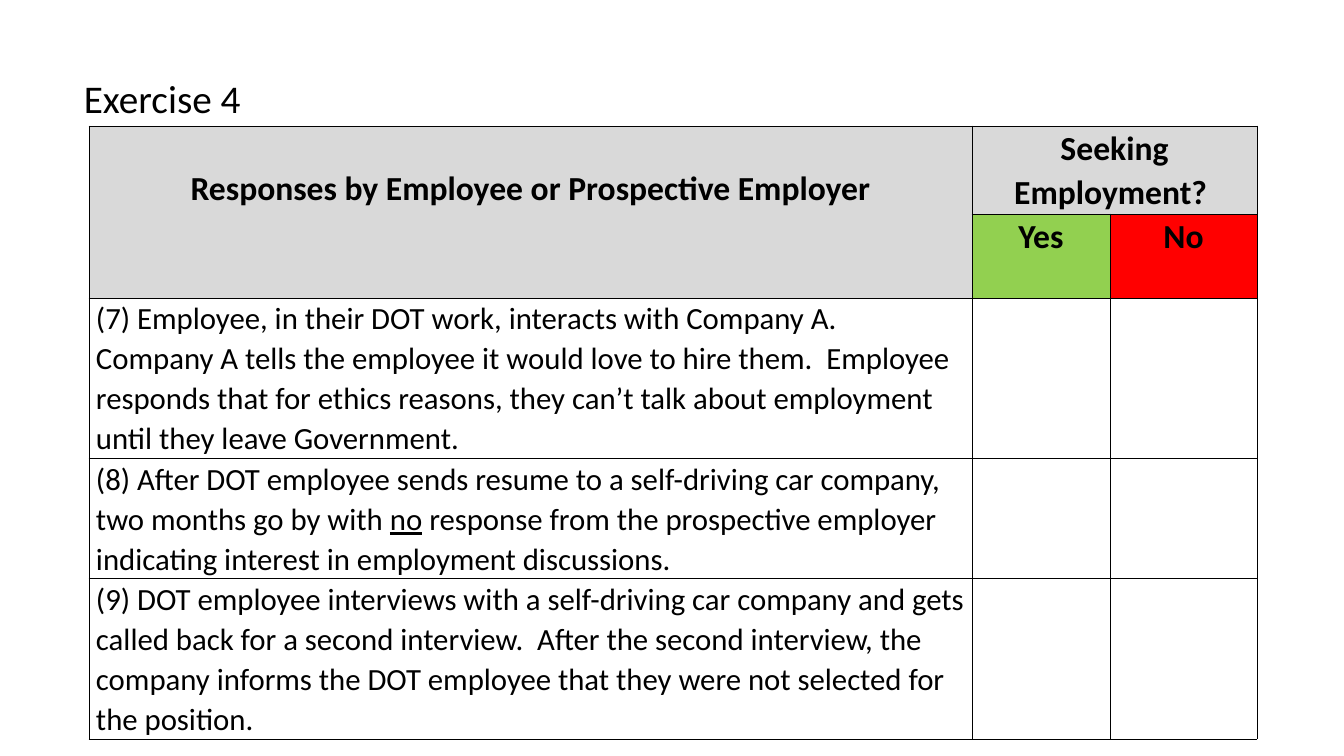
from dataclasses import dataclass

from lxml.etree import SubElement
from pptx import Presentation
from pptx.dml.color import RGBColor
from pptx.enum.text import PP_ALIGN as Align
from pptx.oxml.ns import qn
from pptx.util import Pt

PX = 9071.43  # EMU in one px


@dataclass(frozen=True)
class Theme:
    font: str = "Calibri"
    ink: str = "000000"
    header: str = "D9D9D9"
    yes: str = "92D050"
    no: str = "FF0000"
    title_size: int = 28
    header_size: int = 24
    body_size: int = 22
    border: float = 0.5


theme = Theme()


def px(length):
    return round(length * PX)


def write(frame, *texts, size, bold=False, align=Align.LEFT, spacing=1.07, underlined=""):
    """Fill the first paragraph with one span per text; underline the span equal to underlined."""
    para = frame.paragraphs[0]
    para.alignment = align
    para.line_spacing = spacing
    for text in texts:
        span = para.add_run()
        span.text = text
        span.font.name = theme.font
        span.font.size = Pt(size)
        span.font.bold = bold
        span.font.underline = text == underlined
        span.font.color.rgb = RGBColor.from_string(theme.ink)


deck = Presentation()
deck.slide_width, deck.slide_height = px(1344), px(756)
page = deck.slides.add_slide(deck.slide_layouts[6])

# Table grid
column_widths = [883, 138, 147]
row_heights = [88, 83, 160, 120, 160]
table = page.shapes.add_table(
    len(row_heights), len(column_widths),
    px(89), px(126), px(sum(column_widths)), px(sum(row_heights)),
).table
table.first_row = table.horz_banding = False
for column, width in zip(table.columns, column_widths):
    column.width = px(width)
for row, height in zip(table.rows, row_heights):
    row.height = px(height)

for cell in table.iter_cells():
    cell.margin_left = cell.margin_right = px(7)
    cell.margin_top = cell.margin_bottom = 0
    properties = cell._tc.get_or_add_tcPr()
    for side in ("a:lnL", "a:lnR", "a:lnT", "a:lnB"):
        line = SubElement(properties, qn(side), w=str(Pt(theme.border)))
        fill = SubElement(line, qn("a:solidFill"))
        SubElement(fill, qn("a:srgbClr"), val=theme.ink)
    cell.fill.background()

# Header
table.cell(0, 0).merge(table.cell(1, 0))
table.cell(0, 1).merge(table.cell(0, 2))
table.cell(0, 0).margin_top = px(40)
headers = [
    (0, 0, "Responses by Employee or Prospective Employer", theme.header),
    (0, 1, "Seeking Employment? ", theme.header),
    (1, 1, "Yes", theme.yes),
    (1, 2, "No", theme.no),
]
for row, column, text, color in headers:
    cell = table.cell(row, column)
    cell.fill.solid()
    cell.fill.fore_color.rgb = RGBColor.from_string(color)
    write(cell.text_frame, text, size=theme.header_size, bold=True, align=Align.CENTER)

# Responses
responses = [
    ["(7) Employee, in their DOT work, interacts with Company A.  Company A tells the employee "
     "it would love to hire them.  Employee responds that for ethics reasons, they can’t talk "
     "about employment until they leave Government."],
    ["(8) After DOT employee sends resume to a self-driving car company, two months go by with ",
     "no",
     " response from the prospective employer indicating interest in employment discussions."],
    ["(9) DOT employee interviews with a self-driving car company and gets called back for a "
     "second interview.  After the second interview, the company informs the DOT employee that "
     "they were not selected for the position."],
]
for row, texts in enumerate(responses, start=2):
    write(table.cell(row, 0).text_frame, *texts, size=theme.body_size, underlined="no")

# Title
title = page.shapes.add_textbox(px(74), px(69), px(601), px(57))
title.text_frame.word_wrap = True
write(title.text_frame, "Exercise 4", size=theme.title_size, spacing=1.0)

deck.save("out.pptx")
